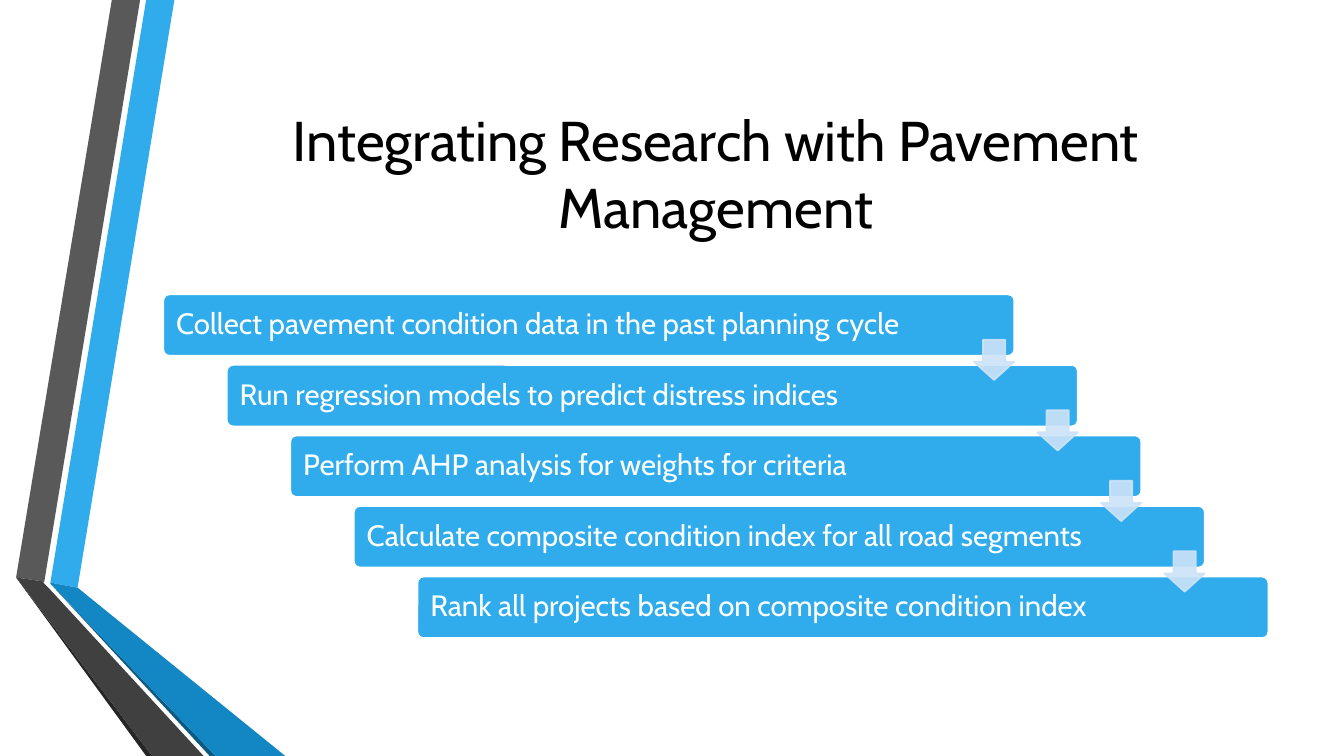
from lxml.etree import SubElement
from pptx import Presentation
from pptx.dml.color import RGBColor
from pptx.enum.shapes import MSO_SHAPE as Shape
from pptx.enum.text import MSO_ANCHOR as Anchor, PP_ALIGN as Align
from pptx.oxml.ns import qn
from pptx.util import Pt

PX = 9144
FONT = "Cabin"
BLACK = RGBColor(0, 0, 0)
WHITE = RGBColor(255, 255, 255)
BLUE = RGBColor(0x30, 0xAC, 0xEC)
NAVY = RGBColor(0x0C, 0x5A, 0x82)
OCEAN = RGBColor(0x12, 0x87, 0xC3)
GRAY = RGBColor(0x59, 0x59, 0x59)
DARK = RGBColor(0x40, 0x40, 0x40)
INK = RGBColor(0x26, 0x26, 0x26)
PALE = RGBColor(0xCD, 0xE3, 0xF8)

TITLE = "Integrating Research with Pavement Management"
STEPS = [
    "Collect pavement condition data in the past planning cycle",
    "Run regression models to predict distress indices",
    "Perform AHP analysis for weights for criteria",
    "Calculate composite condition index for all road segments",
    "Rank all projects based on composite condition index",
]
BANDS = [
    (BLUE, [(34, 578), (61, 583), (157, 0), (129, 0)]),
    (GRAY, [(123, 0), (95, 0), (0, 573), (28, 577)]),
    (INK, [(0, 573), (129, 750), (135, 750)]),
    (NAVY, [(34, 579), (192, 750), (198, 750)]),
    (OCEAN, [(34, 578), (34, 579), (198, 750), (267, 750), (61, 583)]),
    (DARK, [(0, 573), (135, 750), (186, 750), (32, 583), (27, 578), (28, 577)]),
]


def emu(*sizes):
    return [size * PX for size in sizes]


def write(frame, text, size, color, pad):
    frame.word_wrap = True
    frame.vertical_anchor = Anchor.MIDDLE
    frame.margin_left = frame.margin_right = pad * PX
    frame.margin_top = frame.margin_bottom = 5 * PX
    para = frame.paragraphs[0]
    run = para.add_run()
    run.text = text
    run.font.name = FONT
    run.font.size = Pt(size)
    run.font.color.rgb = color
    return para


def paint(shape, fill, line):
    shape.shadow.inherit = False
    shape.fill.solid()
    shape.fill.fore_color.rgb = fill
    if line is None:
        shape.line.fill.background()
    else:
        shape.line.color.rgb = line
        shape.line.width = Pt(1.25)


def fade(shape, share):
    for color in shape.element.spPr.iter(qn("a:srgbClr")):
        SubElement(color, qn("a:alpha"), val=str(share * 1000))


def add_bands(shapes, left, top):
    for color, points in BANDS:
        spots = [(left + x, top + y) for x, y in points]
        pen = shapes.build_freeform(*spots[0], scale=PX)
        pen.add_line_segments(spots[1:], close=True)
        paint(pen.convert_to_shape(), color, None)


def add_title(shapes, left, top, width, height):
    box = shapes.add_textbox(*emu(left, top, width, height))
    para = write(box.text_frame, TITLE, 40, BLACK, 10)
    para.alignment = Align.CENTER


def add_bar(shapes, text, left, top, width, height):
    bar = shapes.add_shape(Shape.ROUNDED_RECTANGLE, *emu(left, top, width, height))
    bar.adjustments[0] = 0.1
    paint(bar, BLUE, WHITE)
    para = write(bar.text_frame, text, 21, WHITE, 11)
    para.alignment = Align.LEFT
    para.line_spacing = 0.9


def add_arrow(shapes, left, top, side):
    arrow = shapes.add_shape(Shape.DOWN_ARROW, *emu(left, top, side, side))
    arrow.adjustments[0] = 0.55
    arrow.adjustments[1] = 0.45
    paint(arrow, PALE, PALE)
    fade(arrow, 90)


def add_stairs(shapes, left, top, width, height):
    wide, tall, side = 844, 61, 40
    last = len(STEPS) - 1
    across = (width - wide) // last
    down = (height - tall) // last
    for i, text in enumerate(STEPS):
        add_bar(shapes, text, left + i * across, top + i * down, wide, tall)
    for i in range(last):
        add_arrow(shapes, left + wide - side + i * across, top + 45 + i * down, side)


def main():
    deck = Presentation()
    deck.slide_width, deck.slide_height = emu(1333, 750)
    shapes = deck.slides.add_slide(deck.slide_layouts[6]).shapes
    add_bands(shapes, 16, 0)
    add_title(shapes, 162, 75, 1096, 192)
    add_stairs(shapes, 162, 292, 1096, 341)
    deck.save("out.pptx")


if __name__ == "__main__":
    main()
